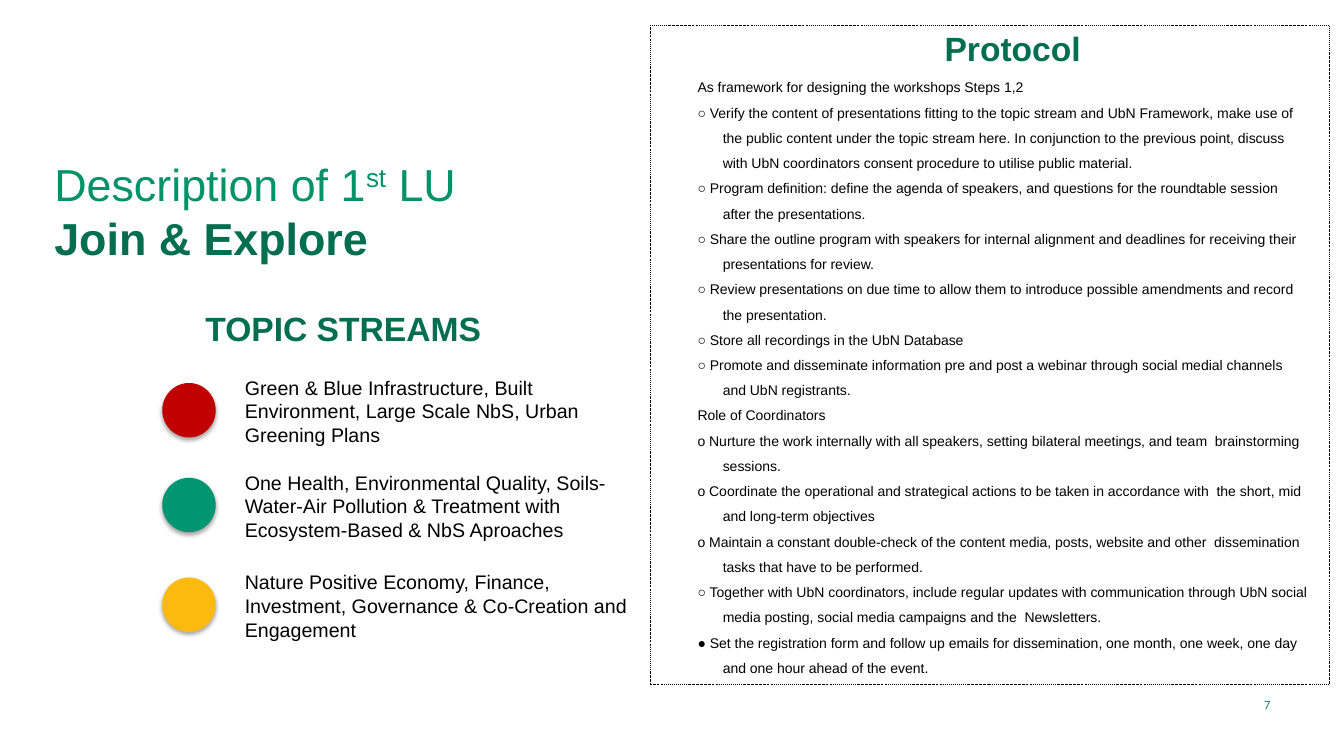
from dataclasses import dataclass

from lxml.etree import SubElement
from pptx import Presentation
from pptx.dml.color import RGBColor
from pptx.enum.dml import MSO_LINE
from pptx.enum.shapes import MSO_SHAPE
from pptx.enum.text import MSO_ANCHOR, PP_ALIGN
from pptx.oxml.ns import qn
from pptx.util import Emu, Pt

EMU_PER_PX = 9144


@dataclass(frozen=True)
class Theme:
    """Colours, fonts and type sizes of the slide."""
    font: str = "Arial"
    number_font: str = "Calibri"
    white: str = "FFFFFF"
    black: str = "000000"
    green: str = "019266"
    dark_green: str = "016E4D"
    streams: tuple = ("C00000", "009671", "FCBA0E")
    title: int = 32
    heading: int = 24
    stream: int = 14
    protocol: int = 10
    number: int = 9


THEME = Theme()

STREAMS = [
    (368, "Green & Blue Infrastructure, Built Environment, Large Scale NbS, Urban Greening Plans"),
    (462, "One Health, Environmental Quality, Soils-Water-Air Pollution & Treatment with "
          "Ecosystem-Based & NbS Aproaches"),
    (561, "Nature Positive Economy, Finance, Investment, Governance & Co-Creation and Engagement"),
]

PROTOCOL = [
    "As framework for designing the workshops Steps 1,2",
    "○ Verify the content of presentations fitting to the topic stream and UbN Framework, make use "
    "of the public content under the topic stream here. In conjunction to the previous point, "
    "discuss with UbN coordinators consent procedure to utilise public material.",
    "○ Program definition: define the agenda of speakers, and questions for the roundtable session "
    "after the presentations.",
    "○ Share the outline program with speakers for internal alignment and deadlines for receiving "
    "their presentations for review.",
    "○ Review presentations on due time to allow them to introduce possible amendments and record "
    "the presentation.",
    "○ Store all recordings in the UbN Database",
    "○ Promote and disseminate information pre and post a webinar through social medial channels "
    "and UbN registrants.",
    "Role of Coordinators",
    "o Nurture the work internally with all speakers, setting bilateral meetings, and team  "
    "brainstorming sessions.",
    "o Coordinate the operational and strategical actions to be taken in accordance with  the "
    "short, mid and long-term objectives",
    "o Maintain a constant double-check of the content media, posts, website and other  "
    "dissemination tasks that have to be performed.",
    "○ Together with UbN coordinators, include regular updates with communication through UbN "
    "social media posting, social media campaigns and the  Newsletters.",
    "● Set the registration form and follow up emails for dissemination, one month, one week, "
    "one day and one hour ahead of the event.",
]


def px(*lengths):
    """Turn pixel lengths into EMU."""
    return [Emu(length * EMU_PER_PX) for length in lengths]


def add_text(slide, box, paragraphs, *, size, color=THEME.black, bold=False, font=THEME.font,
             align=PP_ALIGN.LEFT, anchor=MSO_ANCHOR.TOP, margin=0, indent=0, spacing=None):
    """Add a text box; a paragraph is a string or a list of (text, overrides) runs."""
    frame = slide.shapes.add_textbox(*px(*box)).text_frame
    frame.word_wrap = True
    frame.vertical_anchor = anchor
    for index, content in enumerate(paragraphs):
        paragraph = frame.paragraphs[0] if index == 0 else frame.add_paragraph()
        paragraph.alignment = align
        if spacing:
            paragraph.line_spacing = spacing
        properties = paragraph._p.get_or_add_pPr()
        properties.set("marL", str(margin * EMU_PER_PX))
        properties.set("indent", str(indent * EMU_PER_PX))
        for words, overrides in [(content, {})] if isinstance(content, str) else content:
            if words == "\n":
                paragraph.add_line_break()
                continue
            run = paragraph.add_run()
            run.text = words
            run.font.name = font
            run.font.size = Pt(size)
            run.font.bold = overrides.get("bold", bold)
            run.font.color.rgb = RGBColor.from_string(overrides.get("color", color))
            if "baseline" in overrides:
                run.font._element.set("baseline", str(overrides["baseline"] * 1000))


def add_shape(slide, kind, box, fill):
    """Add a filled preset shape without outline or shadow."""
    shape = slide.shapes.add_shape(kind, *px(*box))
    shape.shadow.inherit = False
    shape.fill.solid()
    shape.fill.fore_color.rgb = RGBColor.from_string(fill)
    shape.line.fill.background()
    return shape


def add_panel(slide, box):
    """Add the white panel with a dash-dot outline."""
    line = add_shape(slide, MSO_SHAPE.RECTANGLE, box, THEME.white).line
    line.color.rgb = RGBColor.from_string(THEME.black)
    line.width = Pt(0.25)
    line.dash_style = MSO_LINE.DASH_DOT


def add_dot(slide, box, fill):
    """Add a coloured circle with a soft shadow below it."""
    dot = add_shape(slide, MSO_SHAPE.OVAL, box, fill)
    effects = dot._element.spPr.find(qn("a:effectLst"))
    shadow = SubElement(effects, qn("a:outerShdw"), blurRad=str(Pt(3.1)), dist=str(Pt(1.8)),
                        dir="5400000", rotWithShape="0")
    color = SubElement(shadow, qn("a:srgbClr"), val=THEME.black)
    SubElement(color, qn("a:alpha"), val="35000")


def main():
    """Build the slide and save it."""
    deck = Presentation()
    deck.slide_width, deck.slide_height = px(1333, 750)
    slide = deck.slides.add_slide(deck.slide_layouts[6])

    add_panel(slide, (645, 25, 673, 654))
    title = [("Description of 1", {}), ("st", {"baseline": 30}), (" LU", {}), ("\n", {}),
             ("Join & Explore", {"bold": True, "color": THEME.dark_green})]
    add_text(slide, (44, 103, 592, 164), [title], size=THEME.title, color=THEME.green,
             anchor=MSO_ANCHOR.BOTTOM)

    heading = dict(size=THEME.heading, color=THEME.dark_green, bold=True)
    add_text(slide, (115, 301, 426, 66), ["TOPIC STREAMS"], align=PP_ALIGN.CENTER,
             margin=50, indent=-25, **heading)
    for (top, stream), color in zip(STREAMS, THEME.streams):
        add_dot(slide, (161, top + 12, 53, 54), color)
        add_text(slide, (208, top, 426, 66), [stream], size=THEME.stream, margin=25)

    add_text(slide, (927, 22, 347, 51), ["Protocol"], anchor=MSO_ANCHOR.BOTTOM, **heading)
    add_text(slide, (657, 65, 651, 404), PROTOCOL, size=THEME.protocol, margin=50, indent=-25,
             spacing=1.5)
    add_text(slide, (1155, 679, 115, 40), ["7"], size=THEME.number, color=THEME.green,
             font=THEME.number_font, align=PP_ALIGN.RIGHT, anchor=MSO_ANCHOR.MIDDLE)

    deck.save("out.pptx")


if __name__ == "__main__":
    main()
